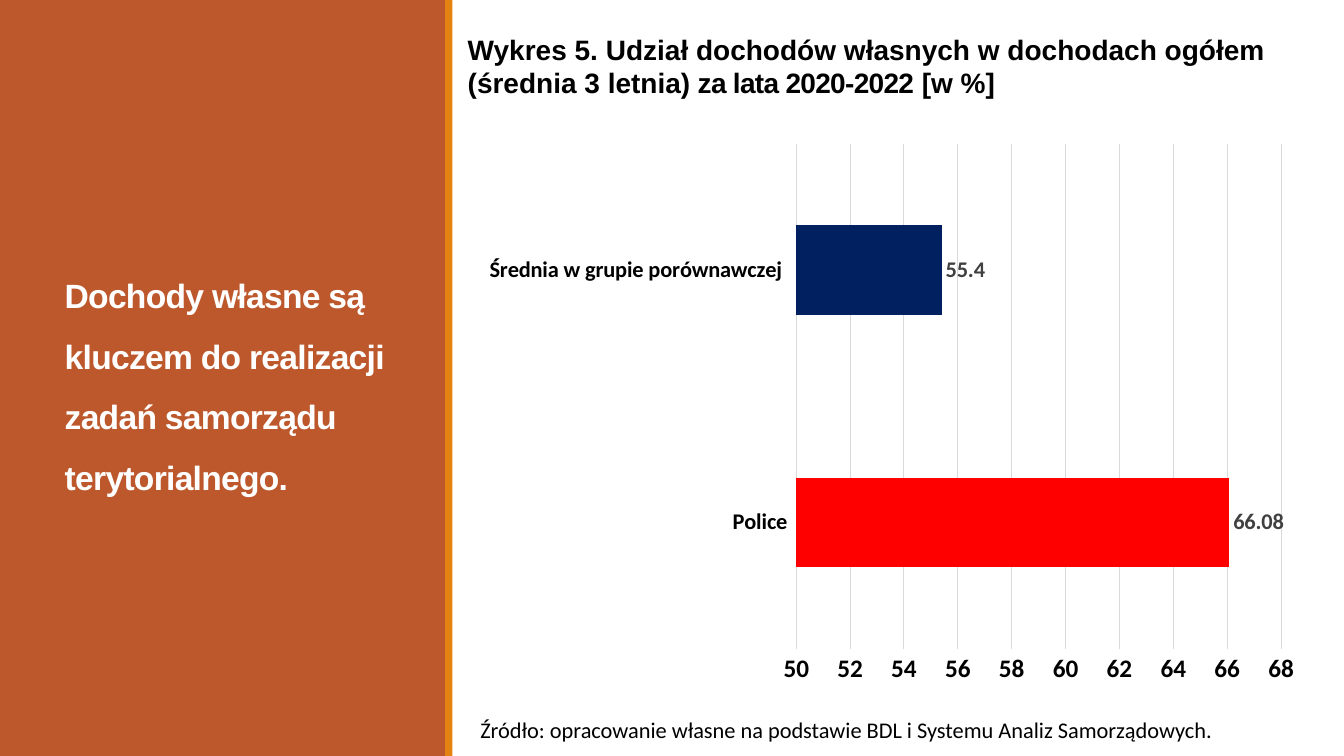
from lxml.etree import SubElement
from pptx import Presentation
from pptx.chart.data import CategoryChartData
from pptx.dml.color import RGBColor
from pptx.enum.chart import XL_CHART_TYPE as ChartType, XL_LABEL_POSITION as LabelPos
from pptx.enum.chart import XL_TICK_MARK as Tick
from pptx.enum.shapes import MSO_SHAPE as Shape
from pptx.enum.text import MSO_ANCHOR as Anchor, MSO_AUTO_SIZE as AutoSize, PP_ALIGN as Align
from pptx.oxml.ns import qn
from pptx.util import Pt

RUST = RGBColor(0xBD, 0x58, 0x2C)
ORANGE = RGBColor(0xE4, 0x83, 0x12)
WHITE = RGBColor(0xFF, 0xFF, 0xFF)
BLACK = RGBColor(0x00, 0x00, 0x00)
RED = RGBColor(0xFF, 0x00, 0x00)
NAVY = RGBColor(0x00, 0x20, 0x60)
DARK_GREY = RGBColor(0x40, 0x40, 0x40)
LIGHT_GREY = RGBColor(0xD9, 0xD9, 0xD9)
EMU_PER_PX = 9525


def px(*lengths):
    return [length * EMU_PER_PX for length in lengths]


class IncomeSlide:
    heading_font = "Arial"
    body_font = "Calibri"

    def __init__(self, deck):
        self.slide = deck.slides.add_slide(deck.slide_layouts[5])
        self.shapes = self.slide.shapes

    def style(self, font, name, size, color, bold=False):
        font.name, font.size, font.bold = name, Pt(size), bold
        font.color.rgb = color

    def panel(self, box, color):
        bar = self.shapes.add_shape(Shape.RECTANGLE, *px(*box))
        bar.shadow.inherit = False
        bar.fill.solid()
        bar.fill.fore_color.rgb = color
        bar.line.fill.background()

    def add_runs(self, frame, parts, name, size, color, bold=False):
        paragraph = frame.paragraphs[0]
        paragraph.alignment = Align.LEFT
        for text, spacing in parts:
            run = paragraph.add_run()
            run.text = text
            self.style(run.font, name, size, color, bold)
            if spacing:
                run.font._element.set("spc", str(spacing))
        return paragraph

    def title(self, box, text):
        message = self.shapes.title
        message.left, message.top, message.width, message.height = px(*box)
        frame = message.text_frame
        frame.word_wrap = True
        frame.auto_size = AutoSize.NONE
        frame.vertical_anchor = Anchor.MIDDLE
        self.add_runs(frame, [(text, -50)], self.heading_font, 24, WHITE, True).line_spacing = 1.5
        self.shapes._spTree.append(message._element)

    def text(self, box, parts, name, size, bold=False, wrap=True, anchor=Anchor.TOP):
        frame = self.shapes.add_textbox(*px(*box)).text_frame
        frame.word_wrap = wrap
        frame.auto_size = AutoSize.SHAPE_TO_FIT_TEXT
        frame.vertical_anchor = anchor
        return self.add_runs(frame, parts, name, size, BLACK, bold)

    def bar_chart(self, box, shares, colors):
        data = CategoryChartData()
        data.categories = list(shares)
        data.add_series("Series 1", list(shares.values()))
        chart = self.shapes.add_chart(ChartType.BAR_CLUSTERED, *px(*box), data).chart
        chart.has_legend = chart.has_title = False
        self.style(chart.font, self.body_font, 10, BLACK)

        plot = chart.plots[0]
        plot.gap_width = 182
        plot.vary_by_categories = False
        series = plot.series[0]
        series.format.fill.solid()
        series.format.fill.fore_color.rgb = colors[0]
        for index, color in enumerate(colors):
            fill = series.points[index].format.fill
            fill.solid()
            fill.fore_color.rgb = color
        labels = series.data_labels
        labels.show_value = True
        labels.position = LabelPos.OUTSIDE_END
        self.style(labels.font, self.body_font, 16, DARK_GREY, True)

        names, scale = chart.category_axis, chart.value_axis
        for axis, size in ((names, 16), (scale, 18)):
            axis.major_tick_mark = axis.minor_tick_mark = Tick.NONE
            self.style(axis.tick_labels.font, self.body_font, size, BLACK, True)
        scale.minimum_scale, scale.maximum_scale, scale.major_unit = 50, 68, 2
        scale.format.line.fill.background()
        scale.has_major_gridlines = True
        for line in (names.format.line, scale.major_gridlines.format.line):
            line.color.rgb = LIGHT_GREY
            line.width = Pt(0.75)
        self.place_plot(chart, x=0.39, y=0.02, w=0.58, h=0.9)

    def place_plot(self, chart, **fractions):
        area = chart._chartSpace.find(".//" + qn("c:plotArea"))
        for old in area.findall(qn("c:layout")):
            area.remove(old)
        layout = SubElement(area, qn("c:layout"))
        area.insert(0, layout)
        manual = SubElement(layout, qn("c:manualLayout"))
        settings = {"layoutTarget": "inner", "xMode": "edge", "yMode": "edge", **fractions}
        for key, value in settings.items():
            SubElement(manual, qn(f"c:{key}")).set("val", str(value))


def main():
    deck = Presentation()
    deck.slide_width, deck.slide_height = px(1280, 720)
    income = IncomeSlide(deck)
    income.panel((0, 0, 425, 720), RUST)
    income.title((52, 55, 324, 606),
                 "Dochody własne są kluczem do realizacji zadań samorządu terytorialnego.")
    income.panel((424, 0, 7, 720), ORANGE)
    caption = income.text(
        (436, 26, 843, 74),
        [("Wykres 5. Udział dochodów własnych w dochodach ogółem (średnia 3 letnia)", 0),
         (" za lata 2020-2022", -50),
         (" [w %]", 0)],
        income.heading_font, 20, bold=True)
    caption.space_after = Pt(10)
    income.text(
        (448, 677, 726, 36),
        [("Źródło: opracowanie własne na podstawie BDL i Systemu Analiz Samorządowych.", 0)],
        income.body_font, 16, wrap=False, anchor=Anchor.MIDDLE)
    income.bar_chart((448, 126, 796, 535),
                     {"Police ": 66.08, "Średnia w grupie porównawczej  ": 55.4},
                     [RED, NAVY])
    deck.save("out.pptx")


if __name__ == "__main__":
    main()
